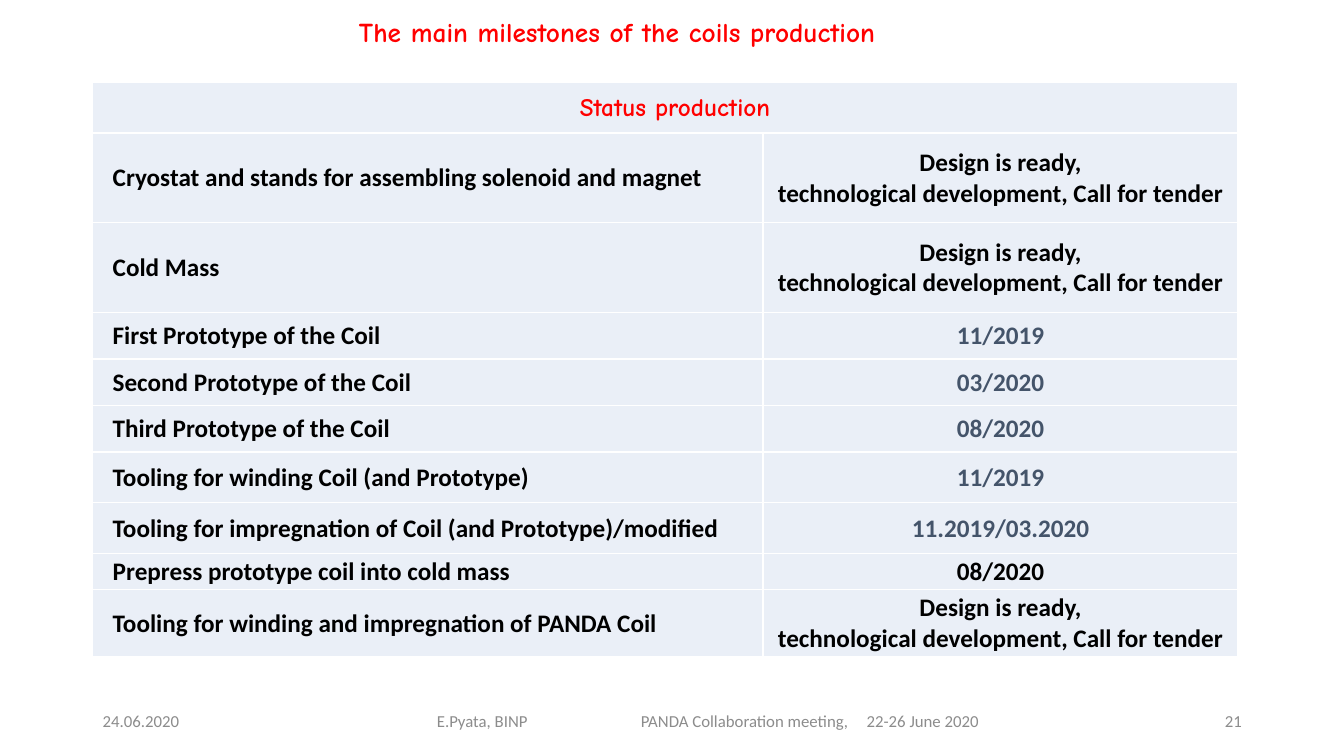
import pptx
import pptx.dml.color
import pptx.enum.text
import pptx.oxml
import pptx.oxml.ns
import pptx.util

Cm, Pt = pptx.util.Cm, pptx.util.Pt
ALIGN = pptx.enum.text.PP_ALIGN
MID = pptx.enum.text.MSO_ANCHOR.MIDDLE
TOP = pptx.enum.text.MSO_ANCHOR.TOP

BLACK, SLATE, RED, GREY = "000000", "44546A", "FF0000", "8C8C8C"
PALE, WHITE = "EAEFF7", "FFFFFF"

TITLE = "The main milestones of the coils production"
HEAD = "Status production"
TENDER = "Design is ready,\ntechnological development, Call for tender"

# task, status, status colour, row height in cm
TASKS = [
    ("Cryostat and stands for assembling solenoid and magnet", TENDER, BLACK, 2.26),
    ("Cold Mass", TENDER, BLACK, 2.26),
    ("First Prototype of the Coil", "11/2019", SLATE, 1.18),
    ("Second Prototype of the Coil", "03/2020", SLATE, 1.17),
    ("Third Prototype of the Coil", "08/2020", SLATE, 1.17),
    ("Tooling for winding Coil (and Prototype)", "11/2019", SLATE, 1.28),
    ("Tooling for impregnation of Coil (and Prototype)/modified",
     "11.2019/03.2020", SLATE, 1.28),
    ("Prepress prototype coil into cold mass", "08/2020", BLACK, 0.91),
    ("Tooling for winding and impregnation of PANDA Coil", TENDER, BLACK, 1.68),
]
HEAD_H = 1.27
COLS = [16.89, 11.97]

BODY = {"name": "Calibri", "size": Pt(18), "bold": True}
SMALL = {"name": "Calibri", "size": Pt(12), "bold": False}
COMIC = {"name": "Comic Neue", "bold": True}

# text, left, width, left margin, alignment, tab stops (cm)
FOOT_Y, FOOT_H = 17.65, 1.02
FOOT = [
    ("24.06.2020", 2.34, 7.62, 0.25, ALIGN.LEFT, []),
    ("E.Pyata, BINP\tPANDA Collaboration meeting,\t22-26 June 2020",
     7.34, 21.13, 3.67, ALIGN.LEFT, [5.14, 10.83]),
    ("21", 23.93, 7.62, 0.25, ALIGN.RIGHT, []),
]


def rgb(code):
    return pptx.dml.color.RGBColor.from_string(code)


def apply(obj, form):
    for key, value in form.items():
        setattr(obj, key, value)


def parse(tag, inner, attrs=""):
    space = pptx.oxml.ns.nsdecls("a")
    return pptx.oxml.parse_xml(f"<a:{tag} {space} {attrs}>{inner}</a:{tag}>")


def write(frame, text, font, color, align, tabs=(), gap=1.0):
    frame.text = text
    for para in frame.paragraphs:
        apply(para, {"alignment": align, "line_spacing": gap})
        if tabs:
            stops = "".join(f'<a:tab pos="{Cm(t)}" algn="l"/>' for t in tabs)
            para._p.get_or_add_pPr().append(parse("tabLst", stops))
        for run in para.runs:
            apply(run.font, font)
            run.font.color.rgb = rgb(color)


def label(slide, place, text, font, color, align, anchor=MID,
          inset=0.25, tabs=(), gap=1.0):
    frame = slide.shapes.add_textbox(*map(Cm, place)).text_frame
    apply(frame, {"word_wrap": True, "vertical_anchor": anchor,
                  "margin_left": Cm(inset)})
    write(frame, text, font, color, align, tabs, gap)


def dress(cell, inset):
    """Give a cell its margins, white borders and pale fill."""
    apply(cell, {"margin_left": Cm(inset), "margin_right": Cm(0.02),
                 "margin_top": Cm(0.02), "margin_bottom": 0,
                 "vertical_anchor": MID})
    props = cell._tc.get_or_add_tcPr()
    ink = f'<a:solidFill><a:srgbClr val="{WHITE}"/></a:solidFill>'
    for side in "LRTB":
        props.append(parse("ln" + side, ink, f'w="{Pt(1)}"'))
    cell.fill.solid()
    cell.fill.fore_color.rgb = rgb(PALE)


def fill_table(slide):
    highs = [HEAD_H] + [task[3] for task in TASKS]
    table = slide.shapes.add_table(
        len(highs), len(COLS), Cm(2.34), Cm(2.08),
        Cm(sum(COLS)), Cm(sum(highs))).table
    for col, width in zip(table.columns, COLS):
        col.width = Cm(width)
    for row, high in zip(table.rows, highs):
        row.height = Cm(high)
        for cell, inset in zip(row.cells, (0.5, 0.02)):
            dress(cell, inset)

    top = table.cell(0, 0)
    top.merge(table.cell(0, 1))
    write(top.text_frame, HEAD, {**COMIC, "size": Pt(18)}, RED, ALIGN.CENTER)
    for i, (task, state, color, _) in enumerate(TASKS, 1):
        write(table.cell(i, 0).text_frame, task, BODY, BLACK, ALIGN.LEFT)
        write(table.cell(i, 1).text_frame, state, BODY, color, ALIGN.CENTER)


def main():
    deck = pptx.Presentation()
    apply(deck, {"slide_width": Cm(33.87), "slide_height": Cm(19.05)})
    slide = deck.slides.add_slide(deck.slide_layouts[6])
    for text, left, width, inset, align, tabs in FOOT:
        label(slide, (left, FOOT_Y, width, FOOT_H), text, SMALL, GREY,
              align, inset=inset, tabs=tabs)
    label(slide, (3.76, 0.41, 23.6, 1.02), TITLE, {**COMIC, "size": Pt(19.5)},
          RED, ALIGN.CENTER, anchor=TOP, gap=0.8)
    fill_table(slide)
    deck.save("out.pptx")


if __name__ == "__main__":
    main()
